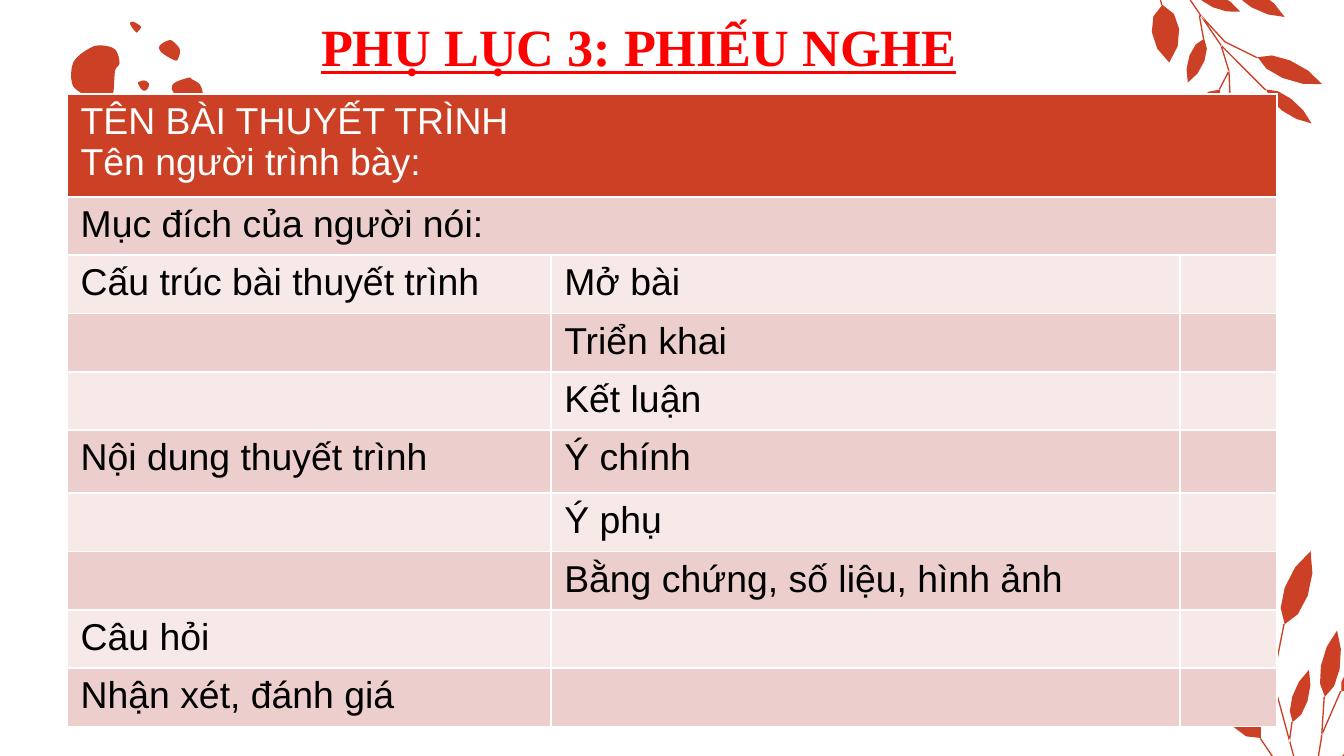
from math import cos, hypot, radians, sin
from typing import NamedTuple

from lxml.etree import SubElement
from pptx import Presentation
from pptx.dml.color import RGBColor
from pptx.enum.text import PP_ALIGN
from pptx.oxml.ns import qn
from pptx.util import Cm, Pt

RUST, ROSE, BLUSH = "CC4125", "ECCFCD", "F6E9E8"
WHITE, BLACK, RED = "FFFFFF", "000000", "FF0000"
CURVE_STEPS = 4
STEM_WIDTH = 0.025

Point = tuple[float, float]


class Leaf(NamedTuple):
    base: Point
    tip: Point
    width: float


class Branch(NamedTuple):
    leaves: list[Leaf]
    stems: list[list[Point]]
    pivot: Point = (0, 0)
    rotation: float = 0


class Row(NamedTuple):
    texts: tuple[str, str, str]
    height: float = 1.1
    spans_all: bool = False


TOP_BRANCH = Branch(
    leaves=[
        Leaf((21.97, 0.1), (22.1, 1.19), 0.52),
        Leaf((22.76, 0.74), (22.45, 1.57), 0.3),
        Leaf((23.77, 1.09), (24.99, 1.6), 0.36),
        Leaf((23.93, 1.7), (24.79, 2.34), 0.28),
        Leaf((23.06, 1.7), (22.4, 2.44), 0.36),
        Leaf((23.29, -0.25), (24.28, 0.33), 0.32),
        Leaf((22.61, -0.13), (23.44, 0.23), 0.26),
        Leaf((22.78, -1.22), (23.85, -1.65), 0.36),
        Leaf((23.55, -0.41), (24.28, -0.38), 0.23),
        Leaf((23.27, 2.01), (23.47, 3.12), 0.36),
    ],
    stems=[
        [(20.37, -2.54), (21.23, -1.73), (22.07, -0.64), (23.09, 0.86), (23.93, 1.7)],
        [(23.09, 0.86), (23.24, 1.35), (23.27, 2.01)],
        [(22.68, 0.3), (22.76, 0.74)],
        [(22.71, 0.3), (23.16, 0.79), (23.77, 1.09)],
        [(23.24, 1.35), (23.06, 1.7)],
        [(21.29, -1.68), (21.79, -0.61), (21.97, 0.1)],
        [(21.29, -1.68), (22.4, -0.84), (23.55, -0.41)],
        [(22.68, -0.71), (23.29, -0.25)],
        [(22.25, -0.36), (22.61, -0.13)],
        [(21.62, -1.4), (22.1, -1.24), (22.78, -1.22)],
    ],
    pivot=(22.85, -0.03),
    rotation=341,
)
BOTTOM_BRANCH = Branch(
    leaves=[
        Leaf((24.28, 11.79), (24.77, 10.41), 0.46),
        Leaf((25.04, 13.16), (25.27, 11.91), 0.36),
        Leaf((24.43, 13.64), (24.74, 12.65), 0.3),
        Leaf((25.35, 13.06), (25.86, 12.42), 0.3),
        Leaf((23.83, 13.94), (23.04, 13.06), 0.5),
        Leaf((23.9, 11.23), (24, 10.06), 0.28),
        Leaf((23.19, 11.53), (22.43, 10.59), 0.36),
        Leaf((23.29, 11.94), (22.23, 11.94), 0.36),
        Leaf((23.85, 12.85), (22.96, 12.5), 0.3),
        Leaf((25.45, 14.22), (26.59, 13.67), 0.42),
    ],
    stems=[
        [(23.9, 11.23), (23.98, 12.5), (24.49, 14.38), (24.82, 17.12)],
        [(24.28, 11.79), (24.1, 12.7), (24.13, 13.21)],
        [(23.83, 13.94), (24.26, 14.58), (24.77, 15.85)],
        [(25.04, 13.16), (24.99, 13.92), (24.79, 15.14)],
        [(25.35, 13.06), (24.99, 13.89)],
        [(24.43, 13.64), (24.38, 14.02)],
        [(23.19, 11.53), (23.7, 12.01), (23.98, 12.5)],
        [(23.29, 11.94), (23.7, 12.01)],
        [(23.85, 12.85), (24.13, 13.21)],
        [(25.45, 14.22), (24.99, 14.78), (24.79, 15.3)],
    ],
)
SPLASHES: list[list[Point]] = [
    [(3.2, 0.76), (3.02, 0.86), (3.05, 0.99), (3.3, 1.14), (3.37, 1.1), (3.4, 0.94), (3.3, 0.81)],
    [(2.72, 1.52), (2.62, 1.55), (2.62, 1.6), (2.69, 1.7), (2.77, 1.7), (2.82, 1.6), (2.79, 1.55)],
    [(1.93, 0.86), (1.7, 0.91), (1.39, 1.17), (1.36, 1.57), (1.52, 1.75), (1.78, 1.88),
     (1.98, 1.85), (2.13, 1.78), (2.16, 1.52), (2.18, 1.32), (2.26, 1.19), (2.18, 0.94)],
    [(2.51, 0.41), (2.46, 0.46), (2.57, 0.61), (2.62, 0.58), (2.66, 0.5)],
    [(3.56, 1.47), (3.28, 1.58), (3.28, 1.75), (3.53, 1.96), (3.81, 1.85), (3.84, 1.8),
     (3.78, 1.6), (3.63, 1.5)],
    [(2.29, 2.06), (2.2, 2.16), (2.26, 2.26), (2.39, 2.24), (2.4, 2.13)],
]
COLUMN_WIDTHS = (9.14, 11.89, 1.83)
ROWS = [
    Row(("TÊN BÀI THUYẾT TRÌNH\nTên người trình bày:", "", ""), 1.94, True),
    Row(("Mục đích của người nói:", "", ""), spans_all=True),
    Row(("Cấu trúc bài thuyết trình", "Mở bài", "")),
    Row(("", "Triển khai", "")),
    Row(("", "Kết luận", "")),
    Row(("Nội dung thuyết trình", "Ý chính", ""), 1.19),
    Row(("", "Ý phụ", "")),
    Row(("", "Bằng chứng, số liệu, hình ảnh", "")),
    Row(("Câu hỏi", "", "")),
    Row(("Nhận xét, đánh giá", "", "")),
]


def rgb(value: str) -> RGBColor:
    return RGBColor.from_string(value)


def bezier(a: Point, b: Point, c: Point, d: Point) -> list[Point]:
    curve = []
    for step in range(1, CURVE_STEPS + 1):
        t = step / CURVE_STEPS
        u = 1 - t
        weights = (u**3, 3 * u * u * t, 3 * u * t * t, t**3)
        curve.append(tuple(sum(w * p[axis] for w, p in zip(weights, (a, b, c, d)))
                           for axis in (0, 1)))
    return curve


def splash_outline(points: list[Point]) -> list[Point]:
    knots = [points[-1], *points, *points[:2]]
    curve = [points[0]]
    for before, start, end, after in zip(knots, knots[1:], knots[2:], knots[3:]):
        leaving = tuple(s + (e - b) / 6 for b, s, e in zip(before, start, end))
        arriving = tuple(e - (a - s) / 6 for s, e, a in zip(start, end, after))
        curve += bezier(start, leaving, arriving, end)
    return curve


def leaf_outline(leaf: Leaf) -> list[Point]:
    (x, y), (tip_x, tip_y), width = leaf
    dx, dy = tip_x - x, tip_y - y
    bulge = width / 1.5 / hypot(dx, dy)

    def control(along: float, side: int) -> Point:
        return (x + dx * along - side * dy * bulge, y + dy * along + side * dx * bulge)

    return [leaf.base,
            *bezier(leaf.base, control(0.15, 1), control(0.7, 1), leaf.tip),
            *bezier(leaf.tip, control(0.7, -1), control(0.15, -1), leaf.base)]


def stem_outline(stem: list[Point]) -> list[Point]:
    far_side = []
    for before, (x, y), after in zip([stem[0], *stem], stem, [*stem[1:], stem[-1]]):
        dx, dy = after[0] - before[0], after[1] - before[1]
        offset = STEM_WIDTH / hypot(dx, dy)
        far_side.append((x - dy * offset, y + dx * offset))
    return [*stem, *reversed(far_side)]


def turn(point: Point, pivot: Point, degrees: float) -> Point:
    x, y = point[0] - pivot[0], point[1] - pivot[1]
    c, s = cos(radians(degrees)), sin(radians(degrees))
    return (pivot[0] + x * c - y * s, pivot[1] + x * s + y * c)


def draw_outlines(shapes, outlines: list[list[Point]], rotation: float = 0) -> None:
    contours = [[(Cm(x), Cm(y)) for x, y in outline] for outline in outlines]
    builder = shapes.build_freeform(*contours[0][0])
    for index, (start, *rest) in enumerate(contours):
        if index:
            builder.move_to(*start)
        builder.add_line_segments(rest, close=True)
    figure = builder.convert_to_shape()
    figure.rotation = rotation
    figure.shadow.inherit = False
    figure.fill.solid()
    figure.fill.fore_color.rgb = rgb(RUST)
    figure.line.fill.background()


def draw_branch(shapes, branch: Branch) -> None:
    outlines = [leaf_outline(leaf) for leaf in branch.leaves]
    outlines += [stem_outline(stem) for stem in branch.stems]
    upright = [[turn(point, branch.pivot, -branch.rotation) for point in outline]
               for outline in outlines]
    draw_outlines(shapes, upright, branch.rotation)


def draw_title(shapes) -> None:
    title = shapes.add_textbox(Cm(3.18), Cm(0.15), Cm(17.78), Cm(1.45))
    frame = title.text_frame
    frame.word_wrap = True
    frame.text = "PHỤ LỤC 3: PHIẾU NGHE"
    heading = frame.paragraphs[0]
    heading.alignment = PP_ALIGN.CENTER
    font = heading.runs[0].font
    font.name, font.size, font.bold, font.underline = "Times New Roman", Pt(28), True, True
    font.color.rgb = rgb(RED)


def format_cell(cell, text: str, fill: str, color: str) -> None:
    properties = cell._tc.get_or_add_tcPr()
    for side in ("a:lnL", "a:lnR", "a:lnT", "a:lnB"):
        border = SubElement(properties, qn(side), w=str(Pt(1)))
        SubElement(SubElement(border, qn("a:solidFill")), qn("a:srgbClr"), val=WHITE)
    cell.fill.solid()
    cell.fill.fore_color.rgb = rgb(fill)
    cell.text_frame.text = text
    for paragraph in cell.text_frame.paragraphs:
        for run in paragraph.runs:
            run.font.name, run.font.size = "Arial", Pt(20)
            run.font.color.rgb = rgb(color)


def draw_listening_sheet(shapes) -> None:
    sheet = shapes.add_table(len(ROWS), len(COLUMN_WIDTHS), Cm(1.27), Cm(1.77),
                             Cm(sum(COLUMN_WIDTHS)), Cm(sum(row.height for row in ROWS))).table
    sheet.first_row = sheet.horz_banding = False
    for column, width in zip(sheet.columns, COLUMN_WIDTHS):
        column.width = Cm(width)
    for index, row in enumerate(ROWS):
        sheet.rows[index].height = Cm(row.height)
        fill = RUST if index == 0 else (BLUSH, ROSE)[index % 2]
        for position, text in enumerate(row.texts):
            format_cell(sheet.cell(index, position), text, fill, BLACK if index else WHITE)
        if row.spans_all:
            sheet.cell(index, 0).merge(sheet.cell(index, len(COLUMN_WIDTHS) - 1))


def main() -> None:
    presentation = Presentation()
    presentation.slide_width, presentation.slide_height = Cm(25.4), Cm(14.28)
    shapes = presentation.slides.add_slide(presentation.slide_layouts[6]).shapes
    for branch in (TOP_BRANCH, BOTTOM_BRANCH):
        draw_branch(shapes, branch)
    splash_group = shapes.add_group_shape()
    for splash in SPLASHES:
        draw_outlines(splash_group.shapes, [splash_outline(splash)])
    draw_title(shapes)
    draw_listening_sheet(shapes)
    presentation.save("out.pptx")


if __name__ == "__main__":
    main()
